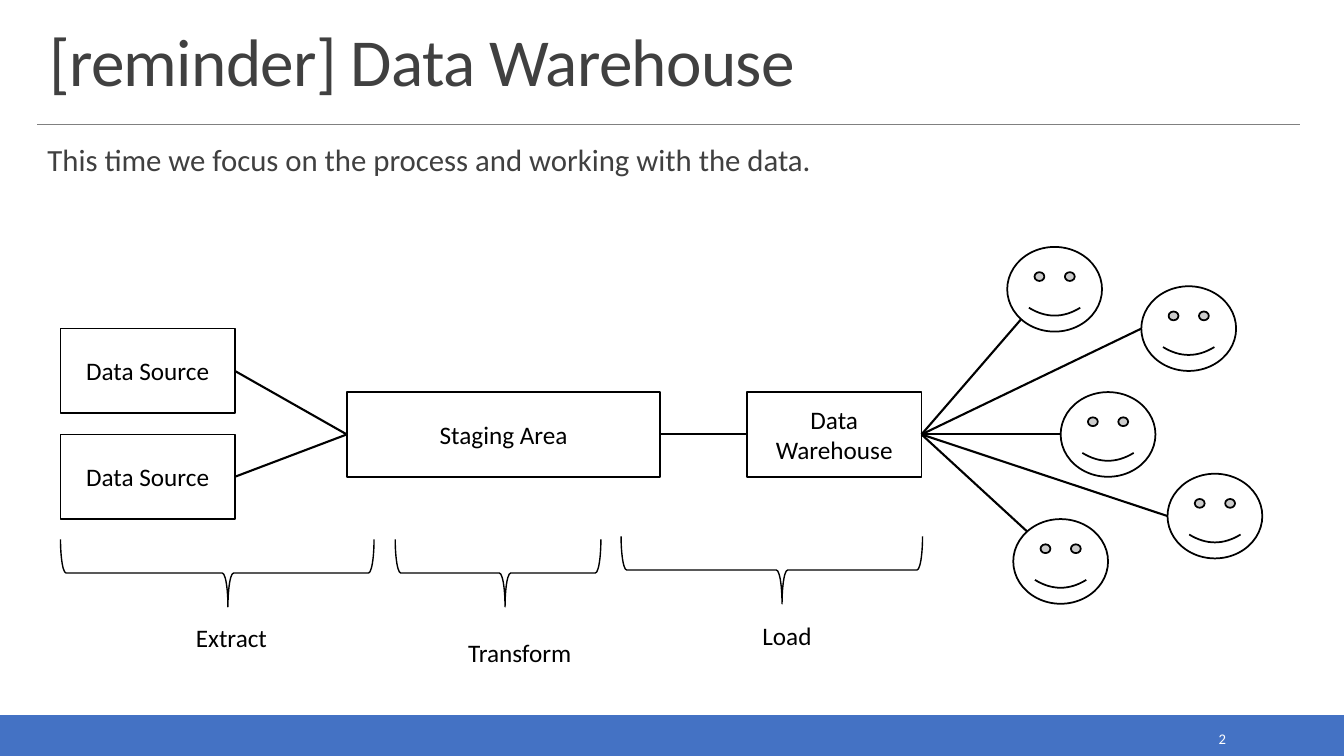
from pptx import Presentation
from pptx import util as u
from pptx.dml.color import RGBColor
from pptx.enum import shapes, text
from pptx.oxml.ns import qn
from lxml import etree

COLORS = {"ink": "000000", "heading": "404040", "rule": "808080", "bar": "4472C4", "paper": "FFFFFF"}
SHAPE = shapes.MSO_SHAPE
ALIGN = text.PP_ALIGN
ANCHOR = text.MSO_ANCHOR
LEFT, RIGHT = 1, 3
BOX_W, BOX_H = 1.73, 0.84
FACE_W, FACE_H = 0.94, 0.84
BRACE_DEPTH = 0.67
DIAGONAL = 0.5 - 0.5 ** 1.5


class Deck:
    font = "Calibri"

    def __init__(self, prs):
        self.slide = prs.slides.add_slide(prs.slide_layouts[1])
        self.shapes = self.slide.shapes

    def color(self, name):
        return RGBColor.from_string(COLORS[name])

    def place(self, sp, left, top, width, height):
        sp.left, sp.top = u.Inches(left), u.Inches(top)
        sp.width, sp.height = u.Inches(width), u.Inches(height)

    def set_text(self, sp, words, size, color="ink", align=ALIGN.CENTER, anchor=ANCHOR.MIDDLE):
        tf = sp.text_frame
        tf.word_wrap = True
        tf.auto_size = text.MSO_AUTO_SIZE.NONE
        tf.vertical_anchor = anchor
        p = tf.paragraphs[0]
        p.alignment = align
        r = p.add_run()
        r.text = words
        r.font.name = self.font
        r.font.size = u.Pt(size)
        r.font.color.rgb = self.color(color)
        return p

    def title(self, words, *at):
        sp = self.shapes.title
        self.place(sp, *at)
        p = self.set_text(sp, words, 48, "heading", ALIGN.LEFT, ANCHOR.BOTTOM)
        p.line_spacing = 0.85
        p.runs[0]._r.get_or_add_rPr().set("spc", "-50")

    def body(self, words, *at):
        sp = self.slide.placeholders[1]
        self.place(sp, *at)
        p = self.set_text(sp, words, 22, "heading", ALIGN.LEFT, ANCHOR.TOP)
        p.line_spacing = 0.9
        p.space_before, p.space_after = u.Pt(12), u.Pt(2)
        pPr = p._p.get_or_add_pPr()
        pPr.set("marL", "0")
        pPr.set("indent", "0")
        etree.SubElement(pPr, qn("a:buNone"))

    def label(self, words, left, top, width, height, size=18, **style):
        sp = self.shapes.add_textbox(0, 0, 0, 0)
        self.place(sp, left, top, width, height)
        self.set_text(sp, words, size, **style)

    def shape(self, kind, at, fill=None, line="ink", weight=1.25):
        sp = self.shapes.add_shape(kind, *(u.Inches(v) for v in at))
        sp.shadow.inherit = False
        if fill:
            sp.fill.solid()
            sp.fill.fore_color.rgb = self.color(fill)
        else:
            sp.fill.background()
        sp.line.color.rgb = self.color(line)
        sp.line.width = u.Pt(weight)
        return sp

    def box(self, words, left, top, width=BOX_W):
        sp = self.shape(SHAPE.RECTANGLE, (left, top, width, BOX_H))
        self.set_text(sp, words, 18)
        return sp

    def brace(self, left, top, span):
        middle_x, middle_y = left + span / 2, top + BRACE_DEPTH / 2
        at = (middle_x - BRACE_DEPTH / 2, middle_y - span / 2, BRACE_DEPTH, span)
        sp = self.shape(SHAPE.LEFT_BRACE, at, weight=1)
        sp.rotation = 270
        sp.adjustments[0], sp.adjustments[1] = 0.083, 0.534

    def line(self, start, end, color="ink", weight=1.5):
        cxn = self.shapes.add_connector(
            shapes.MSO_CONNECTOR.STRAIGHT, *(u.Inches(v) for v in (*start, *end)))
        cxn.line.color.rgb = self.color(color)
        cxn.line.width = u.Pt(weight)
        etree.SubElement(cxn._element.spPr, qn("a:effectLst"))
        return cxn

    def link(self, source, target):
        cxn = self.line((0, 0), (0, 0))
        cxn.begin_connect(source, RIGHT)
        cxn.end_connect(target, LEFT)

    def user(self, source, left, top, touch):
        self.shape(SHAPE.SMILEY_FACE, (left, top, FACE_W, FACE_H), fill="paper")
        end = (left + FACE_W * touch[0], top + FACE_H * touch[1])
        self.line((0, 0), end).begin_connect(source, RIGHT)


def main():
    prs = Presentation()
    prs.slide_width, prs.slide_height = u.Inches(13.33), u.Inches(7.5)
    deck = Deck(prs)

    deck.shape(SHAPE.RECTANGLE, (0, 7.1, 13.33, 0.4), fill="bar", line="bar")
    deck.line((0.37, 1.23), (12.89, 1.23), "rule", 0.5)
    deck.title("[reminder] Data Warehouse", 0.39, 0.2, 12.52, 0.84)
    deck.body("This time we focus on the process and working with the data.", 0.37, 1.39, 12.52, 1.24)
    deck.label("2", 10.83, 7.19, 1.43, 0.28, size=10.5, color="paper", align=ALIGN.RIGHT)

    sources = [deck.box("Data Source", 0.6, top) for top in (3.26, 4.31)]
    staging = deck.box("Staging Area", 3.44, 3.89, 3.11)
    warehouse = deck.box("Data Warehouse", 7.41, 3.89)
    for source in sources:
        deck.link(source, staging)
    deck.link(staging, warehouse)

    steps = [
        ("Extract", 0.6, 5.35, 3.11, 1.47, 6.12),
        ("Transform", 3.92, 5.35, 2.04, 4.33, 6.27),
        ("Load", 6.16, 5.32, 2.99, 6.98, 6.1),
    ]
    for words, left, top, span, label_left, label_top in steps:
        deck.brace(left, top, span)
        deck.label(words, label_left, label_top, 1.65, 0.4)

    side, lower, upper = (0, 0.5), (DIAGONAL, 1 - DIAGONAL), (DIAGONAL, DIAGONAL)
    users = [
        (9.99, 2.45, lower),
        (11.32, 2.84, side),
        (10.52, 3.89, side),
        (11.58, 4.7, side),
        (10.05, 5.15, upper),
    ]
    for left, top, touch in users:
        deck.user(warehouse, left, top, touch)

    prs.save("out.pptx")


if __name__ == "__main__":
    main()
